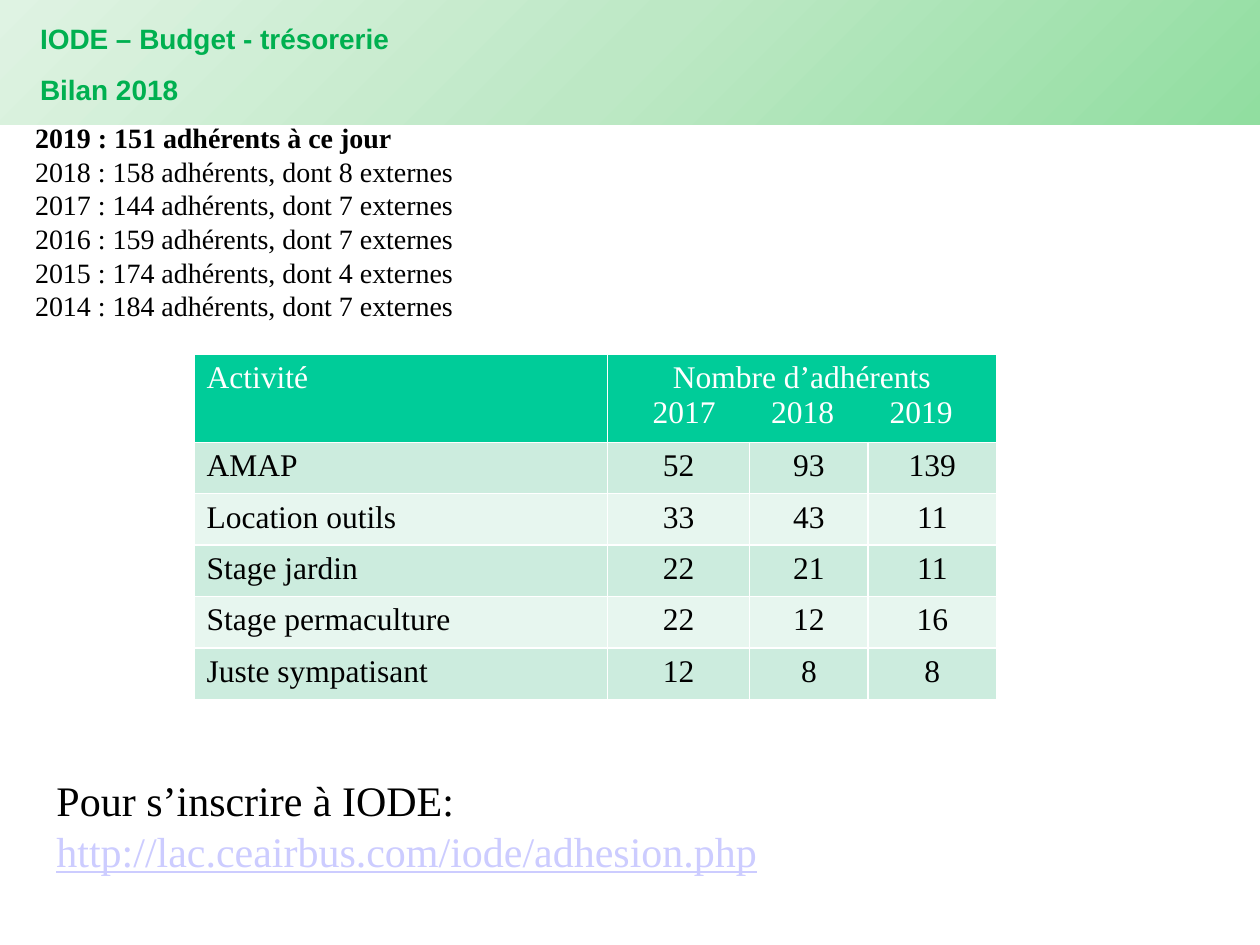
import copy
from dataclasses import dataclass

import lxml.etree
import pptx
import pptx.dml.color
import pptx.enum.shapes
import pptx.enum.text
import pptx.oxml.ns
import pptx.util

ALIGN = pptx.enum.text.PP_ALIGN
qn = pptx.oxml.ns.qn


@dataclass(frozen=True)
class Theme:
    """Colours, fonts and type sizes of the slide."""

    band: tuple = ("DFF3E3", "BDE8C5", "91DEA0")
    title: str = "00B050"
    ink: str = "000000"
    paper: str = "FFFFFF"
    link: str = "CCCCFF"
    table_head: str = "00CC99"
    stripes: tuple = ("CCECDE", "E7F6EF")
    sans: str = "Arial"
    serif: str = "Times New Roman"
    small: int = 16
    medium: int = 18
    large: int = 24
    rule: int = 1


THEME = Theme()
SLIDE_WIDTH, SLIDE_HEIGHT = pptx.util.Inches(10), pptx.util.Inches(7.5)
GRID_COLUMNS, GRID_ROWS = 100, 75

MEMBERSHIP = [(2018, 158, 8), (2017, 144, 7), (2016, 159, 7), (2015, 174, 4), (2014, 184, 7)]
YEARS = (2017, 2018, 2019)
ACTIVITIES = [
    ("AMAP", 52, 93, 139),
    ("Location outils", 33, 43, 11),
    ("Stage jardin", 22, 21, 11),
    ("Stage permaculture", 22, 12, 16),
    ("Juste sympatisant", 12, 8, 8),
]


def across(columns):
    """Turn grid columns into a length."""
    return round(SLIDE_WIDTH * columns / GRID_COLUMNS)


def down(rows):
    """Turn grid rows into a length."""
    return round(SLIDE_HEIGHT * rows / GRID_ROWS)


def place(box):
    """Turn a grid box into left, top, width and height."""
    left, top, width, height = box
    return across(left), down(top), across(width), down(height)


def rgb(value):
    """Read a hexadecimal colour."""
    return pptx.dml.color.RGBColor.from_string(value)


def style(paragraph, color, align=ALIGN.LEFT, **formats):
    """Apply alignment, colour and font formats to a paragraph."""
    paragraph.alignment = align
    for run in paragraph.runs:
        run.font.color.rgb = rgb(color)
        for name, value in formats.items():
            setattr(run.font, name, value)


def write(frame, lines, space_before=0):
    """Fill a text frame with lines of text, each with its formats."""
    for index, (text, formats) in enumerate(lines):
        paragraph = frame.add_paragraph() if index else frame.paragraphs[0]
        paragraph.add_run().text = text
        if index and space_before:
            paragraph.space_before = pptx.util.Pt(space_before)
        style(paragraph, **formats)


def add_text(slide, box, lines, space_before=0):
    """Place a wrapped text box on the grid."""
    frame = slide.shapes.add_textbox(*place(box)).text_frame
    frame.word_wrap = True
    write(frame, lines, space_before)


def add_band(slide, box):
    """Draw the diagonal gradient band behind the title."""
    band = slide.shapes.add_shape(pptx.enum.shapes.MSO_SHAPE.RECTANGLE, *place(box))
    band.shadow.inherit = False
    band.line.fill.background()
    band.fill.gradient()
    band.fill.gradient_angle = 315
    first = band._element.spPr.find(".//" + qn("a:gs"))
    first.addnext(copy.deepcopy(first))
    for index, (stop, color) in enumerate(zip(band.fill.gradient_stops, THEME.band)):
        stop.position = index / (len(THEME.band) - 1)
        stop.color.rgb = rgb(color)


def add_title(slide, box):
    """Write the two title lines."""
    formats = dict(color=THEME.title, name=THEME.sans, size=pptx.util.Pt(THEME.small), bold=True)
    titles = ("IODE – Budget - trésorerie", "Bilan 2018")
    add_text(slide, box, [(title, formats) for title in titles], space_before=10)


def add_membership(slide, box):
    """List the members of each year."""
    formats = dict(color=THEME.ink, name=THEME.serif, size=pptx.util.Pt(THEME.small))
    history = [(f"{year} : {members} adhérents, dont {outside} externes", formats)
               for year, members, outside in MEMBERSHIP]
    current = ("2019 : 151 adhérents à ce jour", formats | {"bold": True})
    add_text(slide, box, [current, *history])


def paint_cell(cell, color):
    """Give a cell its white rules and its fill."""
    properties = cell._tc.get_or_add_tcPr()
    for side in ("a:lnL", "a:lnR", "a:lnT", "a:lnB"):
        rule = lxml.etree.SubElement(properties, qn(side), w=str(pptx.util.Pt(THEME.rule)))
        fill = lxml.etree.SubElement(rule, qn("a:solidFill"))
        lxml.etree.SubElement(fill, qn("a:srgbClr"), val=THEME.paper)
    cell.fill.solid()
    cell.fill.fore_color.rgb = rgb(color)


def add_year_tabs(paragraph, first, step):
    """Set evenly spaced centred tab stops for the years."""
    tabs = lxml.etree.SubElement(paragraph._p.get_or_add_pPr(), qn("a:tabLst"))
    for index in range(len(YEARS)):
        position = across(first + index * step)
        lxml.etree.SubElement(tabs, qn("a:tab"), pos=str(position), algn="ctr")


def add_activities(slide, box, columns=(32.8, 11.3, 9.4, 10.2), head_row=6.9):
    """Build the table of members by activity and year."""
    table = slide.shapes.add_table(len(ACTIVITIES) + 1, len(columns), *place(box)).table
    body_row = (box[3] - head_row) / len(ACTIVITIES)
    for column, width in zip(table.columns, columns):
        column.width = across(width)
    for index, row in enumerate(table.rows):
        row.height = down(body_row if index else head_row)
        fill = THEME.stripes[(index - 1) % 2] if index else THEME.table_head
        for cell in row.cells:
            paint_cell(cell, fill)

    body = dict(color=THEME.ink, name=THEME.serif, size=pptx.util.Pt(THEME.medium), bold=False)
    head = body | {"color": THEME.paper}
    centred = {"align": ALIGN.CENTER}
    table.cell(0, 1).merge(table.cell(0, len(columns) - 1))
    write(table.cell(0, 0).text_frame, [("Activité", head)])
    year_line = "".join(f"\t{year}" for year in YEARS)
    years_frame = table.cell(0, 1).text_frame
    write(years_frame, [("Nombre d’adhérents", head | centred), (year_line, head)])
    add_year_tabs(years_frame.paragraphs[1], first=5.1, step=9.4)
    for row, activity in enumerate(ACTIVITIES, start=1):
        for column, value in enumerate(activity):
            formats = body | centred if column else body
            write(table.cell(row, column).text_frame, [(str(value), formats)])


def add_signup(slide, box):
    """Write the invitation and the address for joining."""
    formats = dict(color=THEME.ink, name=THEME.serif, size=pptx.util.Pt(THEME.large))
    address = formats | {"color": THEME.link, "underline": True}
    add_text(slide, box, [
        ("Pour s’inscrire à IODE:", formats),
        ("http://lac.ceairbus.com/iode/adhesion.php", address),
    ])


def main():
    """Assemble and save the slide."""
    deck = pptx.Presentation()
    deck.slide_width, deck.slide_height = SLIDE_WIDTH, SLIDE_HEIGHT
    slide = deck.slides.add_slide(deck.slide_layouts[6])
    add_band(slide, (0, -0.1, GRID_COLUMNS, 10))
    add_membership(slide, (1.8, 9.1, 55.2, 21.6))
    add_title(slide, (2.2, 1.2, 73.6, 7.7))
    add_activities(slide, (15.4, 28.1, 63.7, 27.3))
    add_signup(slide, (3.5, 61, 60.7, 9.1))
    deck.save("out.pptx")


if __name__ == "__main__":
    main()
